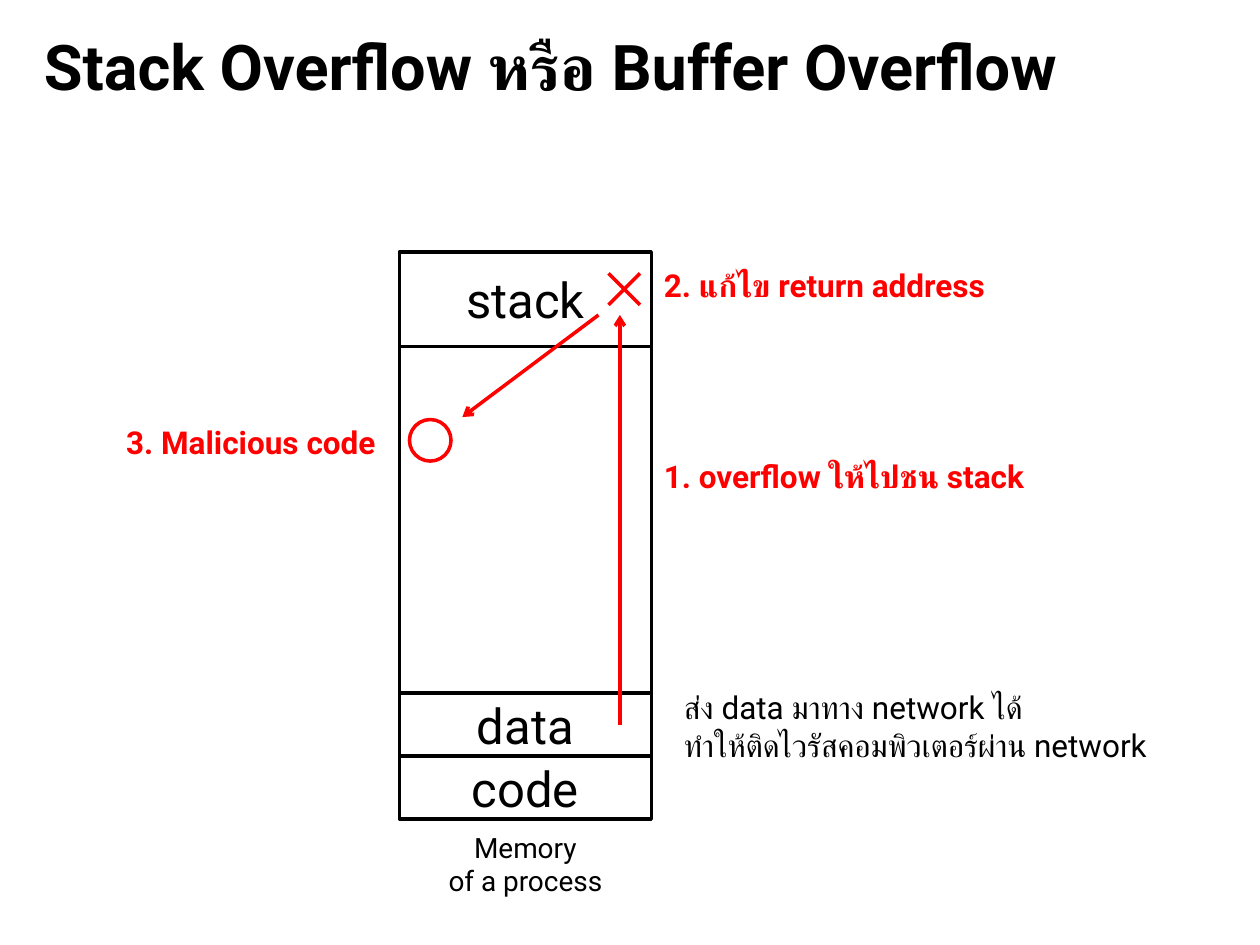
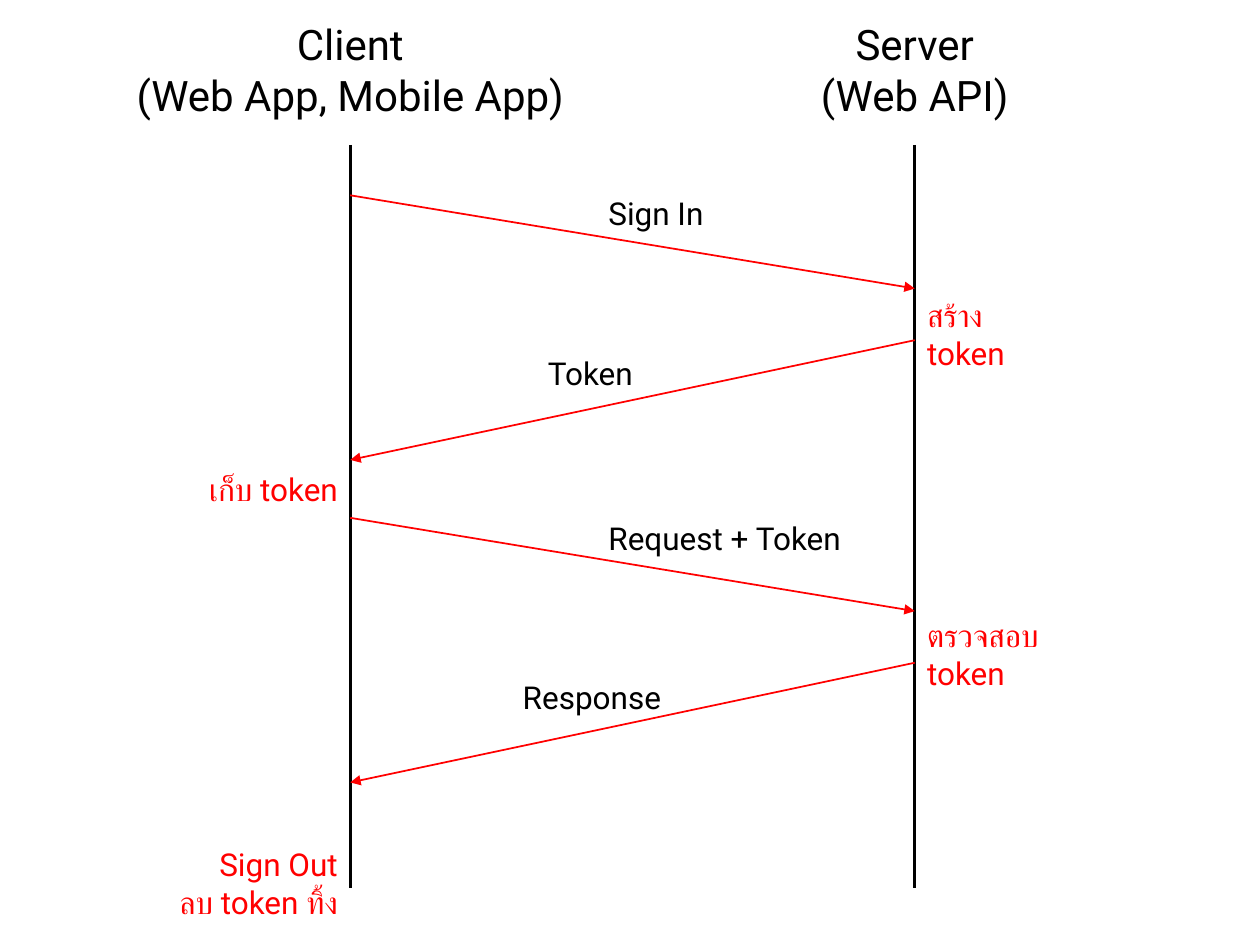
from dataclasses import dataclass

from lxml.etree import SubElement
from pptx import Presentation
from pptx.dml.color import RGBColor
from pptx.enum.shapes import MSO_CONNECTOR, MSO_SHAPE
from pptx.enum.text import MSO_ANCHOR, MSO_AUTO_SIZE, PP_ALIGN
from pptx.oxml.ns import qn
from pptx.util import Inches, Pt


@dataclass(frozen=True)
class Theme:
    font: str = "Roboto"
    ink: RGBColor = RGBColor(0, 0, 0)
    accent: RGBColor = RGBColor(255, 0, 0)
    title: int = 36
    segment: int = 28
    heading: int = 24
    label: int = 18
    caption: int = 16
    outline: float = 2
    lifeline: float = 1.5
    message: float = 1


class SlideBuilder:
    def __init__(self, presentation, theme):
        self.presentation = presentation
        self.theme = theme
        self.slide = None

    def new_slide(self):
        self.slide = self.presentation.slides.add_slide(self.presentation.slide_layouts[6])

    def fill_text(self, text_frame, text, size, color, align, bold=False):
        text_frame.text = text
        for paragraph in text_frame.paragraphs:
            paragraph.alignment = align
            for run in paragraph.runs:
                font = run.font
                font.name = self.theme.font
                font.size = Pt(size)
                font.bold = bold
                font.color.rgb = color
                complex_script = SubElement(run._r.get_or_add_rPr(), qn("a:cs"))
                complex_script.set("typeface", self.theme.font)

    def text(self, text, left, top, width, height, size=None, color=None,
             align=PP_ALIGN.LEFT, bold=False):
        box = self.slide.shapes.add_textbox(
            Inches(left), Inches(top), Inches(width), Inches(height))
        text_frame = box.text_frame
        text_frame.word_wrap = True
        text_frame.auto_size = MSO_AUTO_SIZE.SHAPE_TO_FIT_TEXT
        self.fill_text(text_frame, text, size or self.theme.label,
                       color or self.theme.ink, align, bold)

    def title(self, text):
        self.text(text, 0.25, 0.17, 9.5, 0.71, self.theme.title, bold=True)

    def outline(self, kind, left, top, width, height, color, text=""):
        shape = self.slide.shapes.add_shape(
            kind, Inches(left), Inches(top), Inches(width), Inches(height))
        shape.shadow.inherit = False
        shape.fill.background()
        shape.line.color.rgb = color
        shape.line.width = Pt(self.theme.outline)
        if text:
            shape.text_frame.vertical_anchor = MSO_ANCHOR.MIDDLE
            self.fill_text(shape.text_frame, text, self.theme.segment,
                           self.theme.ink, PP_ALIGN.CENTER)

    def line(self, start, end, color, width, arrowhead=None):
        connector = self.slide.shapes.add_connector(
            MSO_CONNECTOR.STRAIGHT, *map(Inches, start + end))
        connector.line.color.rgb = color
        connector.line.width = Pt(width)
        if arrowhead:
            tail = SubElement(connector.line._get_or_add_ln(), qn("a:tailEnd"))
            tail.set("type", arrowhead)
        SubElement(connector._element.spPr, qn("a:effectLst"))


def build_overflow_slide(builder):
    theme = builder.theme
    builder.new_slide()
    builder.title("Stack Overflow หรือ Buffer Overflow")

    memory_left, memory_width, top = 3.17, 2, 2
    for name, height in (("stack", 0.75), ("", 2.75), ("data", 0.5), ("code", 0.5)):
        builder.outline(MSO_SHAPE.RECTANGLE, memory_left, top, memory_width, height,
                        theme.ink, name)
        top += height
    builder.text("Memory\nof a process", memory_left, 6.54, memory_width, 0.64,
                 theme.caption, align=PP_ALIGN.CENTER)

    for start, end, arrowhead in (
        ((4.92, 5.75), (4.92, 2.5), "arrow"),
        ((4.75, 2.5), (3.67, 3.31), "arrow"),
        ((4.83, 2.42), (5.08, 2.17), None),
        ((5.08, 2.42), (4.83, 2.17), None),
    ):
        builder.line(start, end, theme.accent, theme.outline, arrowhead)
    builder.outline(MSO_SHAPE.OVAL, 3.25, 3.33, 0.33, 0.33, theme.accent)

    for step, left, top, width, align in (
        ("1. overflow ให้ไปชน stack", 5.17, 3.58, 3.25, PP_ALIGN.LEFT),
        ("2. แก้ไข return address", 5.17, 2.06, 2.92, PP_ALIGN.LEFT),
        ("3. Malicious code", 0.83, 3.31, 2.25, PP_ALIGN.RIGHT),
    ):
        builder.text(step, left, top, width, 0.4, color=theme.accent, align=align, bold=True)
    builder.text("ส่ง data มาทาง network ได้\nทำให้ติดไวรัสคอมพิวเตอร์ผ่าน network",
                 5.33, 5.41, 4.33, 0.71)


def build_token_slide(builder):
    theme = builder.theme
    builder.new_slide()
    client, server = 2.78, 7.26

    for x, heading, width in (
        (client, "Client\n(Web App, Mobile App)", 3.89),
        (server, "Server\n(Web API)", 2.31),
    ):
        builder.line((x, 1.15), (x, 7.05), theme.ink, theme.lifeline)
        builder.text(heading, x - width / 2, 0.1, width, 0.91,
                     theme.heading, align=PP_ALIGN.CENTER)

    for top in (1.55, 4.11):
        reply = top + 1.15
        builder.line((client, top), (server, top + 0.74),
                     theme.accent, theme.message, "triangle")
        builder.line((server, reply), (client, reply + 0.95),
                     theme.accent, theme.message, "triangle")

    for message, left, top, width in (
        ("Sign In", 4.73, 1.49, 1.26),
        ("Token", 4.25, 2.76, 1.26),
        ("Request + Token", 4.73, 4.07, 2.19),
        ("Response", 4.05, 5.33, 1.45),
    ):
        builder.text(message, left, top, width, 0.4)

    for action, top, width in (("สร้าง token", 2.3, 1.3), ("ตรวจสอบ token", 4.84, 1.67)):
        builder.text(action, server, top, width, 0.71, color=theme.accent)
    for action, top, width in (("เก็บ token", 3.68, 1.3), ("Sign Out\nลบ token ทิ้ง", 6.66, 1.67)):
        builder.text(action, client - width, top, width, 0.71,
                     color=theme.accent, align=PP_ALIGN.RIGHT)


def main():
    presentation = Presentation()
    presentation.slide_width = Inches(10)
    presentation.slide_height = Inches(7.5)
    builder = SlideBuilder(presentation, Theme())
    build_overflow_slide(builder)
    build_token_slide(builder)
    presentation.save("out.pptx")


if __name__ == "__main__":
    main()
